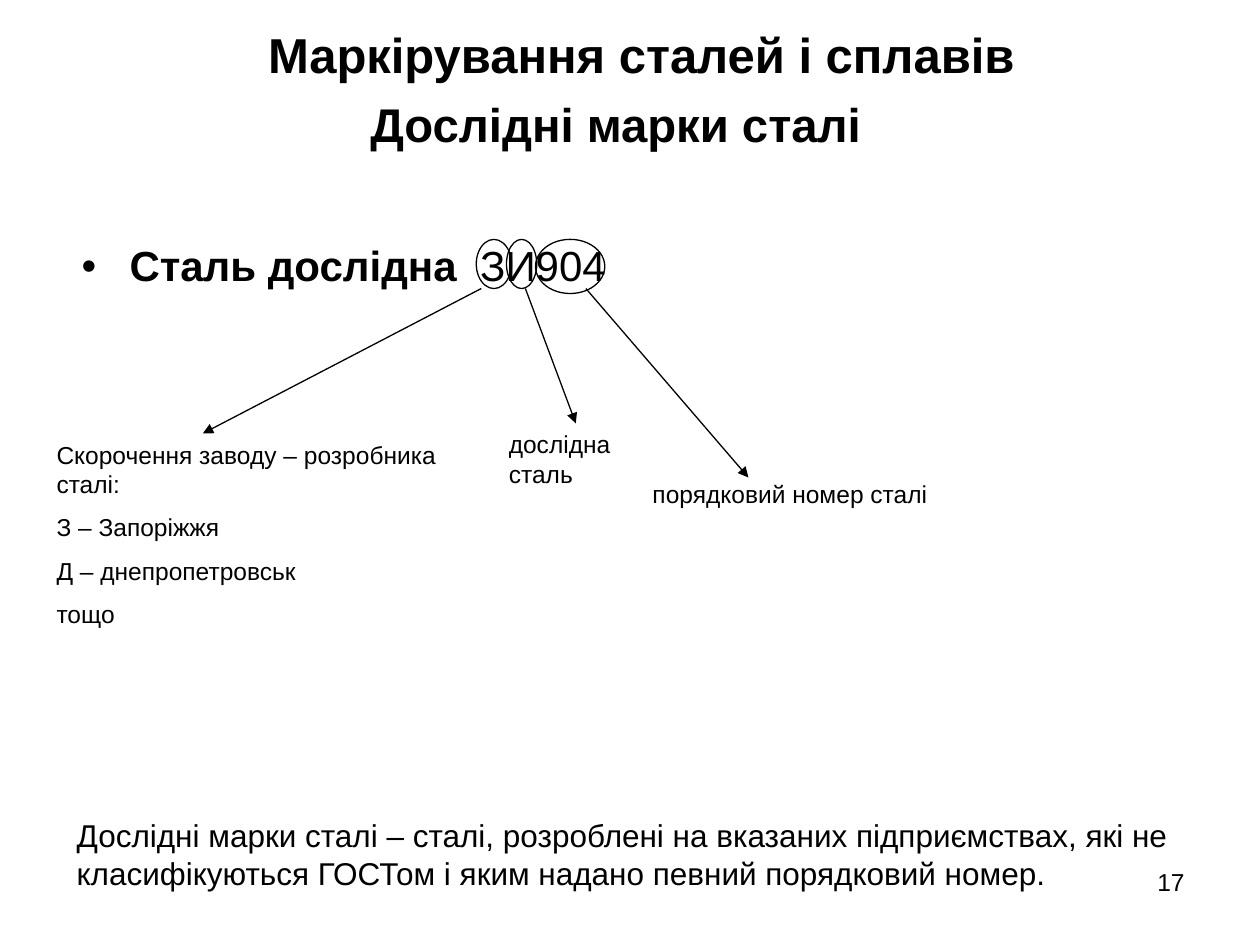
from dataclasses import dataclass

from lxml.etree import SubElement as Sub
from pptx import Presentation
from pptx.dml.color import RGBColor as Rgb
from pptx.enum.shapes import MSO_CONNECTOR as Link, MSO_SHAPE as Kind
from pptx.enum.text import MSO_ANCHOR as Anchor, PP_ALIGN as Align
from pptx.oxml.ns import qn
from pptx.util import Inches, Pt


@dataclass(frozen=True)
class Theme:
    font: str = "Arial"
    ink: Rgb = Rgb(0, 0, 0)
    title: int = 28
    topic: int = 27
    grade: int = 24
    note: int = 18
    label: int = 14
    line: float = 0.75


THEME = Theme()


def add_run(para, text, size, bold=False):
    run = para.add_run()
    run.text = text
    font = run.font
    font.name, font.size, font.bold = THEME.font, Pt(size), bold
    font.color.rgb = THEME.ink
    return run


def add_box(slide, left, top, width, height):
    box = slide.shapes.add_textbox(
        Inches(left), Inches(top), Inches(width), Inches(height))
    box.text_frame.word_wrap = True
    return box.text_frame


def add_text(slide, area, lines, size, bold=False, align=Align.LEFT):
    frame = add_box(slide, *area)
    for i, text in enumerate(lines):
        para = frame.add_paragraph() if i else frame.paragraphs[0]
        para.alignment = align
        if i:
            para.space_before = Pt(8)
        add_run(para, text, size, bold)
    return frame


def add_ring(slide, left, top, width, height):
    ring = slide.shapes.add_shape(
        Kind.OVAL, Inches(left), Inches(top), Inches(width), Inches(height))
    ring.shadow.inherit = False
    ring.fill.background()
    ring.line.color.rgb = THEME.ink
    ring.line.width = Pt(THEME.line)


def add_arrow(slide, start, end):
    arrow = slide.shapes.add_connector(
        Link.STRAIGHT, *(Inches(n) for n in (*start, *end)))
    arrow.line.color.rgb = THEME.ink
    arrow.line.width = Pt(THEME.line)
    props = arrow._element.spPr
    Sub(props.find(qn("a:ln")), qn("a:tailEnd"), type="triangle")
    Sub(props, qn("a:effectLst"))


def add_head(slide, left, top, width):
    title = add_text(slide, (left, top, width, 0.43),
                     ["Маркірування сталей і сплавів"],
                     THEME.title, True, Align.CENTER)
    title.vertical_anchor = Anchor.MIDDLE
    topic = add_text(slide, (left + 2.25, top + 0.55, 4.29, 0.46),
                     ["Дослідні марки сталі"], THEME.topic, True)
    topic.paragraphs[0].line_spacing = 0.9


def add_grade(slide, left, top, width):
    para = add_box(slide, left, top, width, 0.46).paragraphs[0]
    para.line_spacing = 0.9
    props = para._p.get_or_add_pPr()
    props.set("marL", str(Inches(0.38)))
    props.set("indent", str(-Inches(0.38)))
    Sub(props, qn("a:buFont"), typeface=THEME.font)
    Sub(props, qn("a:buChar"), char="•")
    add_run(para, "Сталь дослідна", THEME.grade, True)
    gap = add_run(para, " ", THEME.grade, True)
    gap.font._element.set("spc", "667")
    add_run(para, "ЗИ904", THEME.grade)
    for x, wide, high in ((3.23, 0.28, 0.39), (3.47, 0.24, 0.39),
                          (3.7, 0.55, 0.43)):
        add_ring(slide, left + x, top, wide, high)


def add_keys(slide, left, top):
    keys = (
        ((3.47, 0), (1.26, 1.15), (0, 1.15, 3.39, 1.61),
         ["Скорочення заводу – розробника сталі:", "З – Запоріжжя",
          "Д – днепропетровськ", "тощо"]),
        ((3.82, 0), (4.22, 1.07), (3.59, 1.07, 1.46, 0.57),
         ["дослідна сталь"]),
        ((4.3, 0), (5.59, 1.5), (4.73, 1.46, 2.48, 0.33),
         ["порядковий номер сталі"]),
    )
    for start, end, (x, y, wide, high), lines in keys:
        add_arrow(slide, *((left + a, top + b) for a, b in (start, end)))
        add_text(slide, (left + x, top + y, wide, high), lines, THEME.label)


def add_foot(slide, left, top, width):
    add_text(slide, (left, top, width, 0.7),
             ["Дослідні марки сталі – сталі, розроблені на вказаних "
              "підприємствах, які не класифікуються ГОСТом і яким надано "
              "певний порядковий номер."], THEME.note)
    add_text(slide, (left + width - 2.32, top + 0.4, 2.33, 0.52), ["17"],
             THEME.label, align=Align.RIGHT)


def main():
    deck = Presentation()
    deck.slide_width, deck.slide_height = Inches(10), Inches(7.5)
    slide = deck.slides.add_slide(deck.slide_layouts[6])
    add_head(slide, 0.59, 0.21, 9)
    add_grade(slide, 0.55, 1.9, 8)
    add_keys(slide, 0.35, 2.29)
    add_foot(slide, 0.51, 6.43, 8.98)
    deck.save("out.pptx")


if __name__ == "__main__":
    main()
